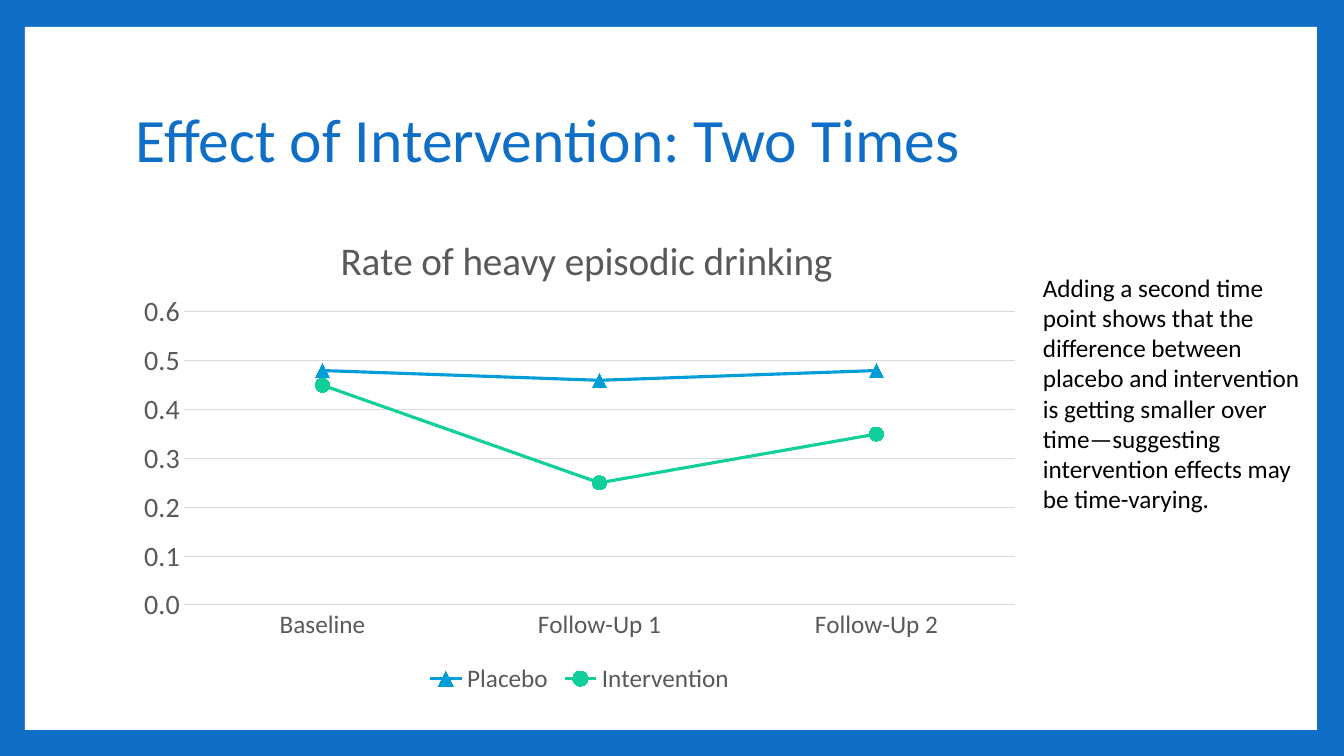
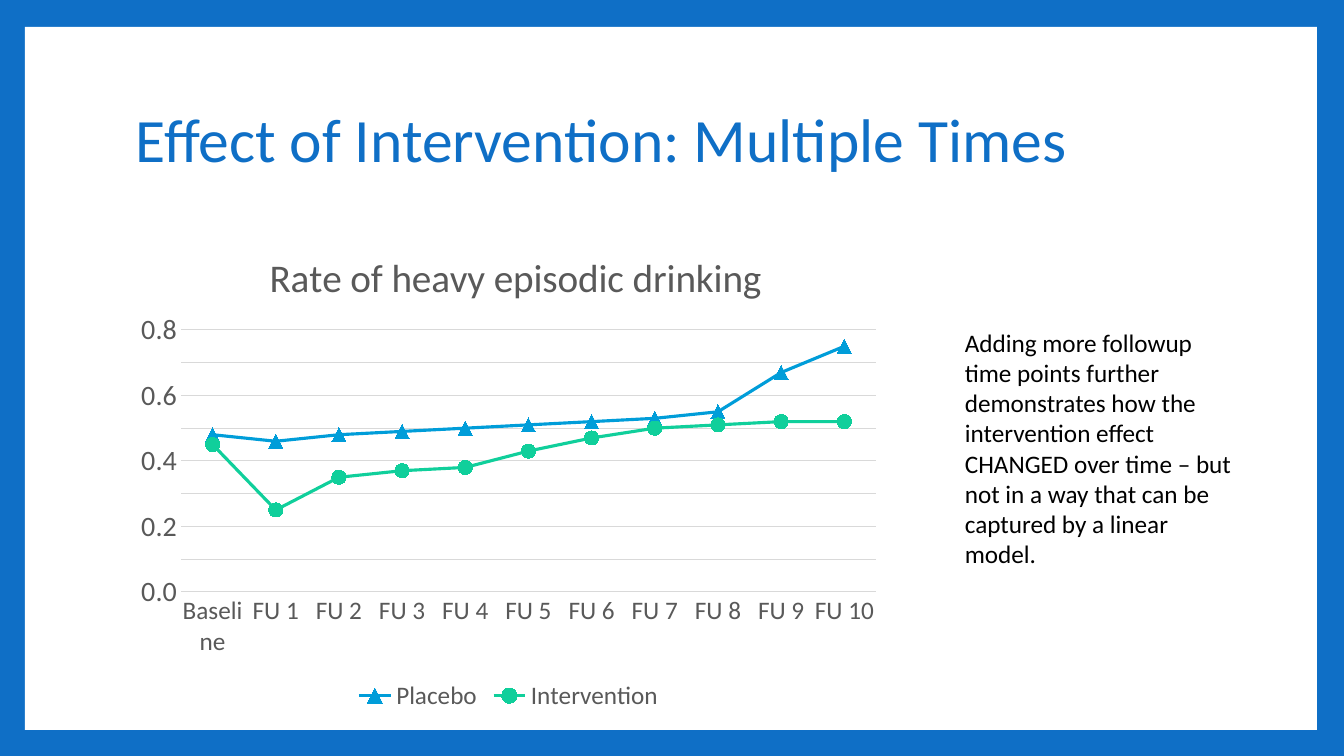
from dataclasses import dataclass

from lxml.etree import SubElement
from pptx import Presentation
from pptx.chart.data import CategoryChartData
from pptx.dml.color import RGBColor
from pptx.enum.chart import XL_CHART_TYPE, XL_LEGEND_POSITION, XL_MARKER_STYLE, XL_TICK_MARK
from pptx.enum.shapes import MSO_SHAPE
from pptx.enum.text import MSO_ANCHOR
from pptx.oxml import parse_xml
from pptx.oxml.ns import nsdecls, qn
from pptx.util import Pt


@dataclass(frozen=True)
class Theme:
    font: str = "Calibri"
    blue: str = "0F6FC6"
    white: str = "FFFFFF"
    black: str = "000000"
    gray: str = "595959"
    grid: str = "D9D9D9"
    title_size: int = 44
    chart_title_size: int = 28
    value_size: int = 20
    body_size: int = 18
    marker_size: int = 10
    line_width: float = 2.25
    grid_width: float = 0.75


THEME = Theme()
EMU_PER_PX = 914400 / 100.8
PAGE_SIZE = (1344, 756)
PANEL = (25, 27, 1292, 703)
TITLE = (126, 68, 1089, 149)
CHART_TITLE = "Rate of heavy episodic drinking"
CHART_TITLE_WIDTH, CHART_TITLE_TOP = 492, 27
SERIES_STYLES = {
    "Placebo": ("009DD9", XL_MARKER_STYLE.TRIANGLE),
    "Intervention": ("10CF9B", XL_MARKER_STYLE.CIRCLE),
}

PAGES = [
    {
        "title": "Effect of Intervention: Two Times",
        "chart": (126, 200, 907, 499),
        "plot": (184, 312, 831, 293),
        "note_box": (1033, 267, 294, 254),
        "note": "Adding a second time point shows that the difference between placebo and "
                "intervention is getting smaller over time—suggesting intervention effects "
                "may be time-varying.",
        "maximum": 0.6,
        "categories": ["Baseline", "Follow-Up 1", "Follow-Up 2"],
        "values": {
            "Placebo": [0.48, 0.46, 0.48],
            "Intervention": [0.45, 0.25, 0.35],
        },
    },
    {
        "title": "Effect of Intervention: Multiple Times",
        "chart": (126, 217, 765, 499),
        "plot": (181, 330, 695, 262),
        "note_box": (955, 322, 294, 254),
        "note": "Adding more followup time points further demonstrates how the intervention "
                "effect CHANGED over time – but not in a way that can be captured by a "
                "linear model.",
        "maximum": 0.8,
        "categories": ["Baseline"] + [f"FU {number}" for number in range(1, 11)],
        "values": {
            "Placebo": [0.48, 0.46, 0.48, 0.49, 0.5, 0.51, 0.52, 0.53, 0.55, 0.67, 0.75],
            "Intervention": [0.45, 0.25, 0.35, 0.37, 0.38, 0.43, 0.47, 0.5, 0.51, 0.52, 0.52],
        },
    },
]


def emu(*lengths):
    return [round(length * EMU_PER_PX) for length in lengths]


def paint(fill, color):
    fill.solid()
    fill.fore_color.rgb = RGBColor.from_string(color)


def draw_line(line, color, width):
    paint(line.fill, color)
    line.width = Pt(width)


def style_font(font, size, color):
    font.name = THEME.font
    font.size = Pt(size)
    font.bold = False
    font.color.rgb = RGBColor.from_string(color)


def add_text(page, bounds, text, size, color, anchor=MSO_ANCHOR.TOP, spacing=None):
    frame = page.shapes.add_textbox(*emu(*bounds)).text_frame
    frame.word_wrap = True
    frame.vertical_anchor = anchor
    para = frame.paragraphs[0]
    para.line_spacing = spacing
    span = para.add_run()
    span.text = text
    style_font(span.font, size, color)


def place(parent, before, **settings):
    for old in parent.findall(qn("c:layout")):
        parent.remove(old)
    layout = parse_xml(f"<c:layout {nsdecls('c')}/>")
    manual = SubElement(layout, qn("c:manualLayout"))
    for name, value in settings.items():
        SubElement(manual, qn(f"c:{name}")).set("val", str(value))
    parent.find(qn(before)).addprevious(layout)


def style_axes(chart, maximum):
    categories, values = chart.category_axis, chart.value_axis
    for axis, size in ((categories, THEME.body_size), (values, THEME.value_size)):
        axis.major_tick_mark = axis.minor_tick_mark = XL_TICK_MARK.NONE
        style_font(axis.tick_labels.font, size, THEME.gray)
    draw_line(categories.format.line, THEME.grid, THEME.grid_width)
    body = categories.tick_labels.font._element.getroottree().find(
        f".//{qn('c:catAx')}/{qn('c:txPr')}/{qn('a:bodyPr')}")
    body.set("rot", "-60000000")
    body.set("vert", "horz")
    values.format.line.fill.background()
    values.minimum_scale, values.maximum_scale, values.major_unit = 0, maximum, 0.1
    values.tick_labels.number_format = "#,##0.0"
    values.tick_labels.number_format_is_linked = False
    draw_line(values.major_gridlines.format.line, THEME.grid, THEME.grid_width)


def style_series(series):
    color, symbol = SERIES_STYLES[series.name]
    series.smooth = False
    draw_line(series.format.line, color, THEME.line_width)
    marker = series.marker
    marker.style, marker.size = symbol, THEME.marker_size
    paint(marker.format.fill, color)
    draw_line(marker.format.line, color, THEME.grid_width)


def add_line_chart(page, content):
    data = CategoryChartData(number_format="0.00")
    data.categories = content["categories"]
    for name, values in content["values"].items():
        data.add_series(name, values)
    left, top, width, height = content["chart"]
    chart = page.shapes.add_chart(
        XL_CHART_TYPE.LINE_MARKERS, *emu(left, top, width, height), data).chart
    style_font(chart.font, 10, THEME.black)
    chart.plots[0].vary_by_categories = False

    chart.has_title = True
    span = chart.chart_title.text_frame.paragraphs[0].add_run()
    span.text = CHART_TITLE
    style_font(span.font, THEME.chart_title_size, THEME.gray)
    chart.chart_title.include_in_layout = False
    place(chart.chart_title._element, "c:overlay", xMode="edge", yMode="edge",
          x=(width - CHART_TITLE_WIDTH) / 2 / width, y=CHART_TITLE_TOP / height)

    chart.has_legend = True
    chart.legend.position = XL_LEGEND_POSITION.BOTTOM
    chart.legend.include_in_layout = False
    style_font(chart.legend.font, THEME.body_size, THEME.gray)

    style_axes(chart, content["maximum"])
    for series in chart.plots[0].series:
        style_series(series)
    plot_left, plot_top, plot_width, plot_height = content["plot"]
    place(chart._chartSpace.find(f".//{qn('c:plotArea')}"), "c:lineChart",
          layoutTarget="inner", xMode="edge", yMode="edge",
          x=(plot_left - left) / width, y=(plot_top - top) / height,
          w=plot_width / width, h=plot_height / height)


def add_page(deck, content):
    page = deck.slides.add_slide(deck.slide_layouts[6])
    paint(page.background.fill, THEME.blue)
    panel = page.shapes.add_shape(MSO_SHAPE.RECTANGLE, *emu(*PANEL))
    panel.shadow.inherit = False
    paint(panel.fill, THEME.white)
    panel.line.fill.background()
    add_text(page, TITLE, content["title"], THEME.title_size, THEME.blue,
             MSO_ANCHOR.MIDDLE, 0.9)
    add_line_chart(page, content)
    add_text(page, content["note_box"], content["note"], THEME.body_size, THEME.black)


def main():
    deck = Presentation()
    deck.slide_width, deck.slide_height = emu(*PAGE_SIZE)
    for content in PAGES:
        add_page(deck, content)
    deck.save("out.pptx")


if __name__ == "__main__":
    main()
